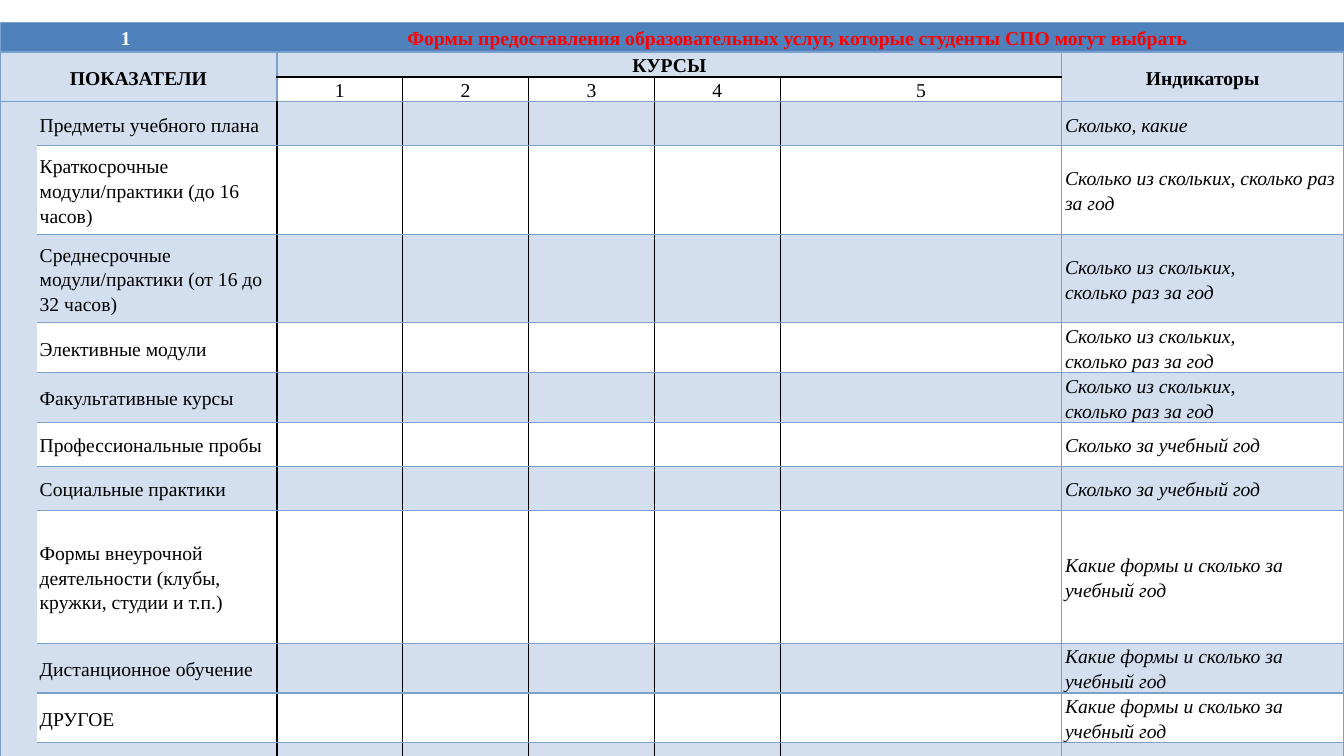
from dataclasses import dataclass

from lxml import etree
from pptx import Presentation
from pptx import util as u
from pptx.dml.color import RGBColor
from pptx.enum import text
from pptx.oxml import ns


@dataclass(frozen=True)
class Theme:
    font: str = "Times New Roman"
    size: int = 14
    line_spacing: float = 1.15
    header: str = "4F81BD"
    band: str = "D3DFEE"
    blue_line: str = "7BA0CD"
    black: str = "000000"
    white: str = "FFFFFF"
    red: str = "FF0000"


class TableSlide:
    """Holds the theme, the slide and its table.

    Edges are four letters for left, right, top and bottom:
    b is blue, k is black and - is no line.
    """

    def __init__(self, presentation, theme):
        self.theme = theme
        self.slide = presentation.slides.add_slide(presentation.slide_layouts[6])
        self.line_colors = {"b": theme.blue_line, "k": theme.black}

    def add_table(self, left, top, widths, heights):
        frame = self.slide.shapes.add_table(
            len(heights), len(widths), u.Cm(left), u.Cm(top),
            u.Cm(sum(widths)), u.Cm(sum(heights)))
        self.table = frame.table
        self.table.first_row = self.table.horz_banding = False
        for column, width in zip(self.table.columns, widths):
            column.width = u.Cm(width)
        for row, height in zip(self.table.rows, heights):
            row.height = u.Cm(height)

    def border(self, cell, side, code):
        properties = cell._tc.get_or_add_tcPr()
        line = etree.Element(ns.qn(f"a:ln{side}"), w=str(u.Pt(1)))
        if code in self.line_colors:
            fill = etree.SubElement(line, ns.qn("a:solidFill"))
            etree.SubElement(fill, ns.qn("a:srgbClr"), val=self.line_colors[code])
        else:
            etree.SubElement(line, ns.qn("a:noFill"))
        # Border lines stand before the fill, in the order L, R, T, B
        properties.insert("LRTB".index(side), line)

    def add_cell(self, row, column, content="", fill=None, edges="bbbb", span=(1, 1),
                 align=text.PP_ALIGN.LEFT, color=None, bold=False, italic=False):
        last_row, last_column = row + span[0] - 1, column + span[1] - 1
        origin = self.table.cell(row, column)
        if span != (1, 1):
            origin.merge(self.table.cell(last_row, last_column))
        origin.text_frame.text = content

        for r in range(row, last_row + 1):
            for c in range(column, last_column + 1):
                cell = self.table.cell(r, c)
                cell.margin_left = cell.margin_right = u.Cm(0.08)
                cell.margin_top = cell.margin_bottom = 0
                cell.vertical_anchor = text.MSO_ANCHOR.MIDDLE
                if fill:
                    cell.fill.solid()
                    cell.fill.fore_color.rgb = RGBColor.from_string(fill)
                else:
                    cell.fill.background()
                outer = (c == column, c == last_column, r == row, r == last_row)
                for side, code, is_outer in zip("LRTB", edges, outer):
                    self.border(cell, side, code if is_outer else "-")
                for paragraph in cell.text_frame.paragraphs:
                    paragraph.alignment = align
                    paragraph.line_spacing = self.theme.line_spacing
                    font = paragraph.font
                    font.name, font.size = self.theme.font, u.Pt(self.theme.size)
                    font.bold, font.italic = bold, italic
                    font.color.rgb = RGBColor.from_string(color or self.theme.black)


HOW_MANY = "Сколько из скольких,\nсколько раз за год"
PER_YEAR = "Сколько за учебный год"
WHICH_FORMS = "Какие формы и сколько за учебный год"

# Label, indicator and row height in centimetres
INDICATORS = [
    ("Предметы учебного плана", "Сколько, какие", 1.11),
    ("Краткосрочные модули/практики (до 16 часов)",
     "Сколько из скольких, сколько раз за год", 2.23),
    ("Среднесрочные модули/практики (от 16 до 32 часов)", HOW_MANY, 2.23),
    ("Элективные модули", HOW_MANY, 1.11),
    ("Факультативные курсы", HOW_MANY, 1.11),
    ("Профессиональные пробы", PER_YEAR, 1.11),
    ("Социальные практики", PER_YEAR, 1.11),
    ("Формы внеурочной деятельности (клубы, кружки, студии и т.п.)",
     WHICH_FORMS, 3.34),
    ("Дистанционное обучение", WHICH_FORMS, 1.11),
    ("ДРУГОЕ", WHICH_FORMS, 1.11),
    ("", "", 0.79),
]
HEADER_HEIGHTS = [0.74, 0.38, 0.38]
COLUMN_WIDTHS = [0.92, 5.42, 0.64] + [3.17] * 4 + [7.1] * 2
COURSES = range(1, 6)
FIRST_COURSE_COLUMN = 3
INDICATOR_COLUMN = 8


def main():
    presentation = Presentation()
    presentation.slide_width, presentation.slide_height = u.Cm(33.87), u.Cm(19.05)
    theme = Theme()
    page = TableSlide(presentation, theme)
    page.add_table(0, 0.57, COLUMN_WIDTHS,
                   HEADER_HEIGHTS + [height for _, _, height in INDICATORS])

    # Title row
    heading = dict(align=text.PP_ALIGN.CENTER, bold=True)
    page.add_cell(0, 0, "1", theme.header, "b-bb", (1, 2), color=theme.white, **heading)
    page.add_cell(0, 2, "Формы предоставления образовательных услуг, "
                  "которые студенты СПО могут выбрать",
                  theme.header, "-bbb", (1, 7), color=theme.red, **heading)

    # Column headings
    page.add_cell(1, 0, "ПОКАЗАТЕЛИ", theme.band, span=(2, 3), **heading)
    page.add_cell(1, FIRST_COURSE_COLUMN, "КУРСЫ", theme.band, "bbbk", (1, 5), **heading)
    page.add_cell(1, INDICATOR_COLUMN, "Индикаторы", theme.band, span=(2, 1), **heading)
    for course in COURSES:
        left = "b" if course == COURSES[0] else "k"
        right = "b" if course == COURSES[-1] else "k"
        page.add_cell(2, FIRST_COURSE_COLUMN + course - 1, str(course),
                      edges=left + right + "kb", align=text.PP_ALIGN.CENTER)

    # Banded rows beside the tall narrow cell
    first_row = len(HEADER_HEIGHTS)
    page.add_cell(first_row, 0, fill=theme.band, edges="b-bb", span=(len(INDICATORS), 1))
    for index, (label, indicator, _) in enumerate(INDICATORS):
        row = first_row + index
        fill = theme.band if index % 2 == 0 else None
        page.add_cell(row, 1, label, fill, "-kbb", (1, 2))
        for course in COURSES:
            right = "b" if course == COURSES[-1] else "k"
            page.add_cell(row, FIRST_COURSE_COLUMN + course - 1, fill=fill,
                          edges="k" + right + "bb")
        page.add_cell(row, INDICATOR_COLUMN, indicator, fill, italic=True)

    presentation.save("out.pptx")


if __name__ == "__main__":
    main()
